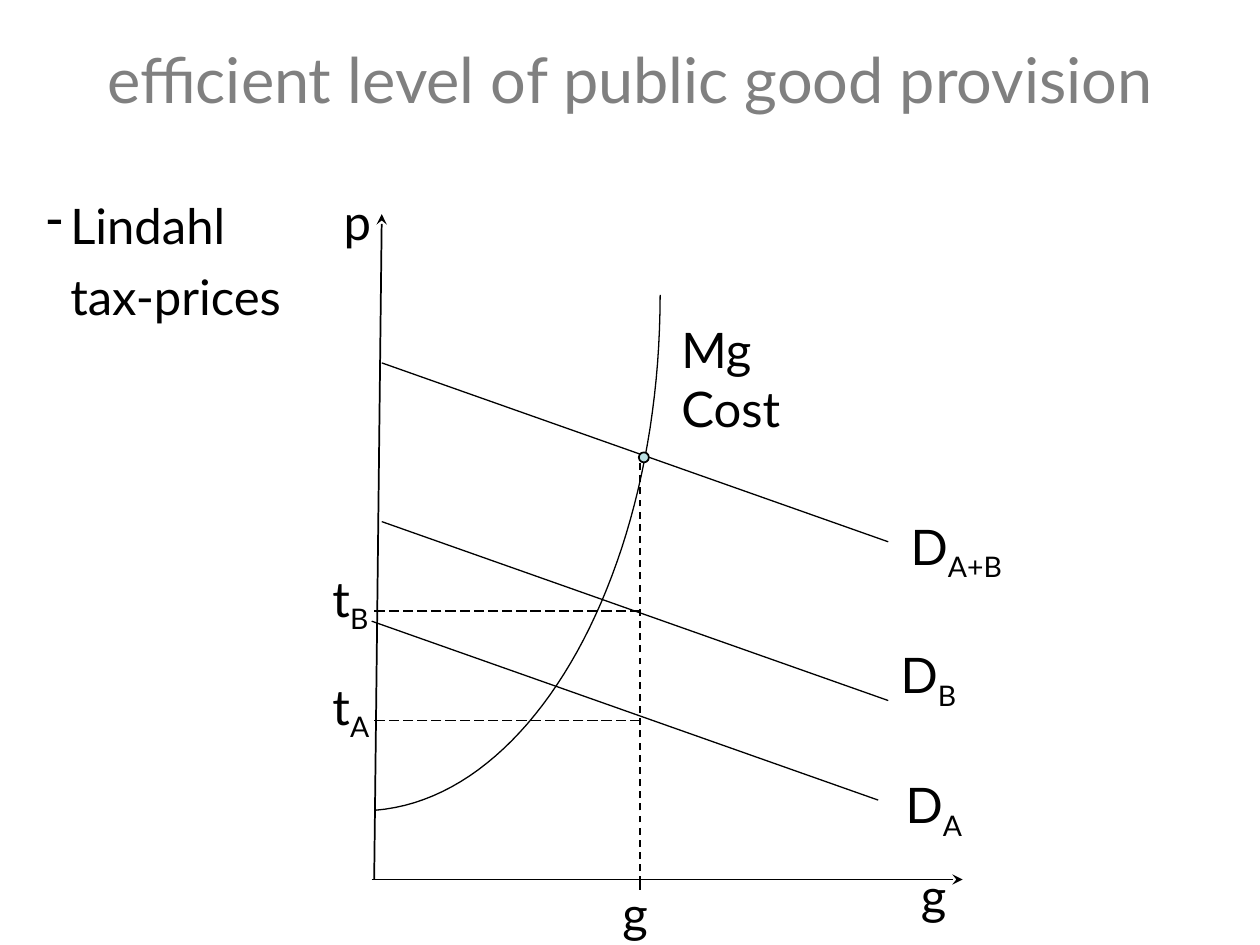
from lxml import etree
from pptx import Presentation
from pptx.dml.color import RGBColor
from pptx.enum.dml import MSO_LINE_DASH_STYLE as DASH
from pptx.enum.shapes import MSO_CONNECTOR, MSO_SHAPE
from pptx.enum.text import MSO_ANCHOR, MSO_AUTO_SIZE, PP_ALIGN
from pptx.oxml.ns import qn
from pptx.util import Inches, Pt

THEME = {
    "font": "Lato",
    "ink": RGBColor(0, 0, 0),
    "title": RGBColor(0x80, 0x80, 0x80),
    "point": RGBColor(0xBB, 0xE0, 0xE3),
    "title_size": Pt(36),
    "text_size": Pt(28),
    "thin": Pt(0.75),
    "thick": Pt(1),
}


def add_run(p, text, size=THEME["text_size"], color=THEME["ink"], sub=False):
    r = p.add_run()
    r.text = text
    r.font.name = THEME["font"]
    r.font.size = size
    r.font.color.rgb = color
    if sub:
        r._r.get_or_add_rPr().set("baseline", "-25000")


def add_line(x1, y1, x2, y2, width=THEME["thin"], dash=None, arrow=False):
    c = s.shapes.add_connector(MSO_CONNECTOR.STRAIGHT, Inches(x1), Inches(y1), Inches(x2), Inches(y2))
    c.line.color.rgb = THEME["ink"]
    c.line.width = width
    if dash:
        c.line.dash_style = dash
    if arrow:
        etree.SubElement(c.line._get_or_add_ln(), qn("a:tailEnd"), type="stealth")
    etree.SubElement(c._element.spPr, qn("a:effectLst"))


prs = Presentation()
prs.slide_width, prs.slide_height = Inches(10), Inches(7.5)
s = prs.slides.add_slide(prs.slide_layouts[5])

# Title
title = s.shapes.title
title.left, title.top, title.width, title.height = Inches(0.5), Inches(0), Inches(9), Inches(1.25)
tf = title.text_frame
tf.auto_size = MSO_AUTO_SIZE.NONE
tf.vertical_anchor = MSO_ANCHOR.MIDDLE
p = tf.paragraphs[0]
p.alignment = PP_ALIGN.CENTER
add_run(p, "efficient level of public good provision", THEME["title_size"], THEME["title"])

# Marginal cost curve, sampled from a cubic Bezier
controls = [(2.98, 6.43), (4.24, 6.33), (5.24, 4.53), (5.24, 2.34)]
steps = 48
curve = []
for i in range(steps + 1):
    t = i / steps
    weights = ((1 - t) ** 3, 3 * t * (1 - t) ** 2, 3 * t * t * (1 - t), t ** 3)
    curve.append([Inches(sum(w * c[axis] for w, c in zip(weights, controls))) for axis in (0, 1)])
builder = s.shapes.build_freeform(*curve[0])
builder.add_line_segments(curve[1:], close=False)
sp = builder.convert_to_shape()
sp.shadow.inherit = False
sp.fill.background()
sp.line.color.rgb = THEME["ink"]
sp.line.width = THEME["thin"]

# Axes, with the tick and the drop line at the efficient quantity
quantity = 5.08
add_line(2.95, 6.98, 7.64, 6.98, THEME["thick"], arrow=True)
add_line(2.97, 6.98, 3.03, 1.7, THEME["thick"], arrow=True)
add_line(quantity, 7.06, quantity, 6.95, THEME["thick"])
add_line(quantity, 7.01, quantity, 3.67, THEME["thick"], DASH.DASH)

# Parallel demand lines: A, B and their sum
for x, y in [(2.95, 4.93), (3.03, 4.14), (3.03, 2.88)]:
    add_line(x, y, x + 4.02, y + 1.42)

# Tax-price levels
for y in (4.85, 5.72):
    add_line(quantity, y, 2.95, y, dash=DASH.LONG_DASH)

# Equilibrium point
sp = s.shapes.add_shape(MSO_SHAPE.FLOWCHART_CONNECTOR, Inches(5.07), Inches(3.59), Inches(0.08), Inches(0.08))
sp.shadow.inherit = False
sp.fill.solid()
sp.fill.fore_color.rgb = THEME["point"]
sp.line.color.rgb = THEME["ink"]
sp.line.width = THEME["thick"]

# Labels: left, top, width, text, subscript, wrap
labels = [
    (2.63, 1.47, 0.4, "p", "", False),
    (7.21, 6.82, 0.39, "g", "", False),
    (4.84, 6.96, 0.51, "g*", "", False),
    (7.09, 6.1, 0.67, "D", "A", False),
    (7.05, 5.07, 0.64, "D", "B", False),
    (7.13, 4.05, 0.96, "D", "A+B", False),
    (2.54, 4.46, 0.49, "t", "B", False),
    (2.54, 5.32, 0.52, "t", "A", False),
    (5.31, 2.49, 1.5, "Mg Cost", "", True),
]
for x, y, w, text, sub, wrap in labels:
    tf = s.shapes.add_textbox(Inches(x), Inches(y), Inches(w), Inches(0.57)).text_frame
    tf.word_wrap = wrap
    add_run(tf.paragraphs[0], text)
    if sub:
        add_run(tf.paragraphs[0], sub, sub=True)

# Note with a dash bullet and a hanging second line
tf = s.shapes.add_textbox(Inches(0.27), Inches(1.5), Inches(9.57), Inches(1.16)).text_frame
tf.word_wrap = True
for text, bullet in [("Lindahl", True), ("tax-prices", False)]:
    p = tf.paragraphs[0] if bullet else tf.add_paragraph()
    p.space_after = Pt(7)
    pPr = p._p.get_or_add_pPr()
    pPr.set("marL", str(Inches(0.19)))
    pPr.set("indent", str(Inches(-0.19 if bullet else 0)))
    if bullet:
        etree.SubElement(pPr, qn("a:buChar"), char="-")
    add_run(p, text)

prs.save("out.pptx")
